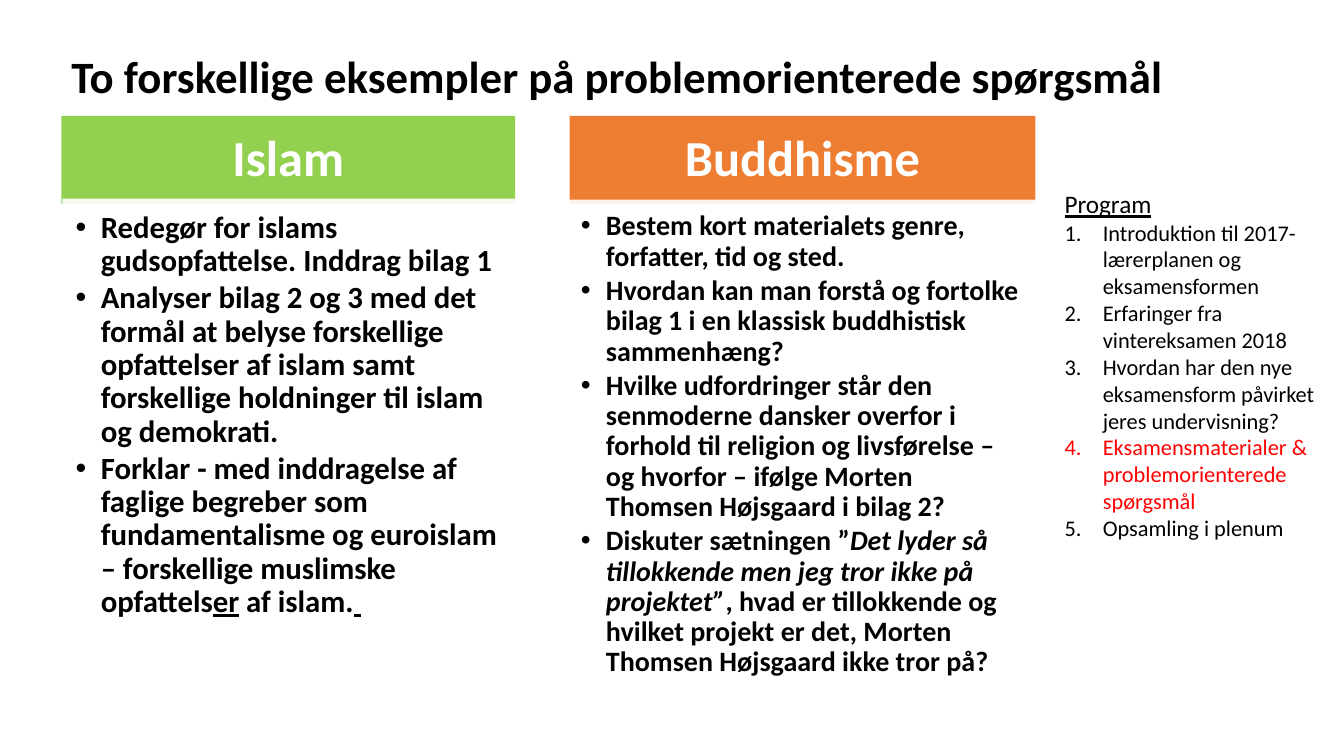
from dataclasses import dataclass

import pptx
import pptx.dml.color
import pptx.enum.shapes
import pptx.enum.text
import pptx.oxml.ns
import pptx.util
from lxml import etree

Inches = pptx.util.Inches
Pt = pptx.util.Pt
Align = pptx.enum.text.PP_ALIGN
Anchor = pptx.enum.text.MSO_ANCHOR
BLACK, WHITE, RED = "000000", "FFFFFF", "FF0000"


@dataclass
class Run:
    text: str
    italic: bool = False
    underline: bool = False


@dataclass
class Box:
    left: float
    top: float
    width: float
    height: float

    def lengths(self) -> list:
        return [Inches(v) for v in (self.left, self.top, self.width, self.height)]


@dataclass
class Religion:
    name: str
    color: str
    header: Box
    panel: Box
    insets: tuple[float, float, float, float]
    size: int
    questions: list[list[Run]]


RELIGIONS = [
    Religion(
        "Islam", "92D050", Box(0.61, 1.15, 4.5, 0.87), Box(0.62, 1.97, 4.5, 5.25),
        (0.13, 0.13, 0.17, 0.19), 22,
        [
            [Run("Redegør for islams gudsopfattelse. Inddrag bilag 1")],
            [Run("Analyser bilag 2 og 3 med det formål at belyse forskellige opfattelser "
                 "af islam samt forskellige holdninger til islam og demokrati.")],
            [Run("Forklar - med inddragelse af faglige begreber som fundamentalisme og "
                 "euroislam – forskellige muslimske opfattels"),
             Run("er", underline=True), Run(" af islam."), Run(" ", underline=True)],
        ],
    ),
    Religion(
        "Buddhisme", "ED7D31", Box(5.65, 1.15, 4.62, 0.87), Box(5.64, 1.98, 4.65, 5.25),
        (0.12, 0.12, 0.16, 0.17), 20,
        [
            [Run("Bestem kort materialets genre, forfatter, tid og sted.")],
            [Run("Hvordan kan man forstå og fortolke bilag 1 i en klassisk buddhistisk "
                 "sammenhæng?")],
            [Run("Hvilke udfordringer står den senmoderne dansker overfor i forhold til "
                 "religion og livsførelse – og hvorfor – ifølge Morten Thomsen Højsgaard "
                 "i bilag 2?")],
            [Run("Diskuter sætningen ”"),
             Run("Det lyder så tillokkende men jeg tror ikke på projektet”", italic=True),
             Run(", hvad er tillokkende og hvilket projekt er det, Morten Thomsen "
                 "Højsgaard ikke tror på?")],
        ],
    ),
]

PROGRAM = [
    "Introduktion til 2017-lærerplanen og eksamensformen",
    "Erfaringer fra vintereksamen 2018",
    "Hvordan har den nye eksamensform påvirket jeres undervisning?",
    "Eksamensmaterialer & problemorienterede spørgsmål",
    "Opsamling i plenum",
]
CURRENT_ITEM = "Eksamensmaterialer & problemorienterede spørgsmål"


def rgb(color: str) -> pptx.dml.color.RGBColor:
    return pptx.dml.color.RGBColor.from_string(color)


def set_frame(frame, insets=(0.1, 0.05, 0.1, 0.05), anchor=Anchor.TOP) -> None:
    frame.word_wrap = True
    frame.vertical_anchor = anchor
    (frame.margin_left, frame.margin_top,
     frame.margin_right, frame.margin_bottom) = map(Inches, insets)


def add_text(frame, text: str | list[Run], *, size: int, color: str = BLACK,
             bold: bool = False, underline: bool = False, align=Align.LEFT,
             spacing: float = 1.0, after: float = 0, hanging: float = 0,
             bullet: str = "", numbering: str = "") -> None:
    """Append a paragraph, filling the frame's first one if it is empty."""
    first = frame.paragraphs[0]
    paragraph = frame.add_paragraph() if first.runs else first
    paragraph.alignment = align
    paragraph.line_spacing = spacing
    paragraph.space_after = Pt(after)
    if hanging:
        properties = paragraph._p.get_or_add_pPr()
        properties.set("marL", str(Inches(hanging)))
        properties.set("indent", str(-Inches(hanging)))
        font = etree.SubElement(properties, pptx.oxml.ns.qn("a:buFont"))
        font.set("typeface", "Arial" if bullet else "+mj-lt")
        if bullet:
            etree.SubElement(properties, pptx.oxml.ns.qn("a:buChar")).set("char", bullet)
        else:
            etree.SubElement(properties, pptx.oxml.ns.qn("a:buAutoNum")).set("type", numbering)
    for part in [Run(text, underline=underline)] if isinstance(text, str) else text:
        run = paragraph.add_run()
        run.text = part.text
        run.font.name = "Calibri"
        run.font.size = Pt(size)
        run.font.bold = bold
        run.font.italic = part.italic
        run.font.underline = part.underline
        run.font.color.rgb = rgb(color)


def add_block(slide, box: Box, color: str, opacity: int = 100):
    block = slide.shapes.add_shape(
        pptx.enum.shapes.MSO_SHAPE.RECTANGLE, *box.lengths())
    block.shadow.inherit = False
    block.fill.solid()
    block.fill.fore_color.rgb = rgb(color)
    block.line.fill.background()
    if opacity < 100:
        fill = block._element.spPr.find(".//" + pptx.oxml.ns.qn("a:srgbClr"))
        etree.SubElement(fill, pptx.oxml.ns.qn("a:alpha")).set("val", str(opacity * 1000))
    return block


def add_religion(slide, religion: Religion) -> None:
    header = add_block(slide, religion.header, religion.color).text_frame
    set_frame(header, (0.28, 0.16, 0.28, 0.16), Anchor.MIDDLE)
    add_text(header, religion.name, size=36, color=WHITE, bold=True,
             align=Align.CENTER, spacing=0.9)
    panel = add_block(slide, religion.panel, WHITE, opacity=90).text_frame
    set_frame(panel, religion.insets)
    for question in religion.questions:
        add_text(panel, question, size=religion.size, bold=True, spacing=0.9,
                 after=3, hanging=0.25, bullet="•")


def main() -> None:
    deck = pptx.Presentation()
    deck.slide_width, deck.slide_height = Inches(13.33), Inches(7.5)
    slide = deck.slides.add_slide(deck.slide_layouts[6])

    # Title
    title = slide.shapes.add_textbox(*Box(0.61, 0.4, 12.29, 0.76).lengths()).text_frame
    set_frame(title, anchor=Anchor.MIDDLE)
    add_text(title, "To forskellige eksempler på problemorienterede spørgsmål",
             size=32, bold=True, spacing=0.9)

    # Program list
    program = slide.shapes.add_textbox(*Box(10.46, 1.82, 2.73, 3.9).lengths()).text_frame
    set_frame(program)
    add_text(program, "Program", size=18, underline=True)
    for item in PROGRAM:
        add_text(program, item, size=16, color=RED if item == CURRENT_ITEM else BLACK,
                 hanging=0.38, numbering="arabicPeriod")

    # One column per religion
    for religion in RELIGIONS:
        add_religion(slide, religion)

    deck.save("out.pptx")


if __name__ == "__main__":
    main()
